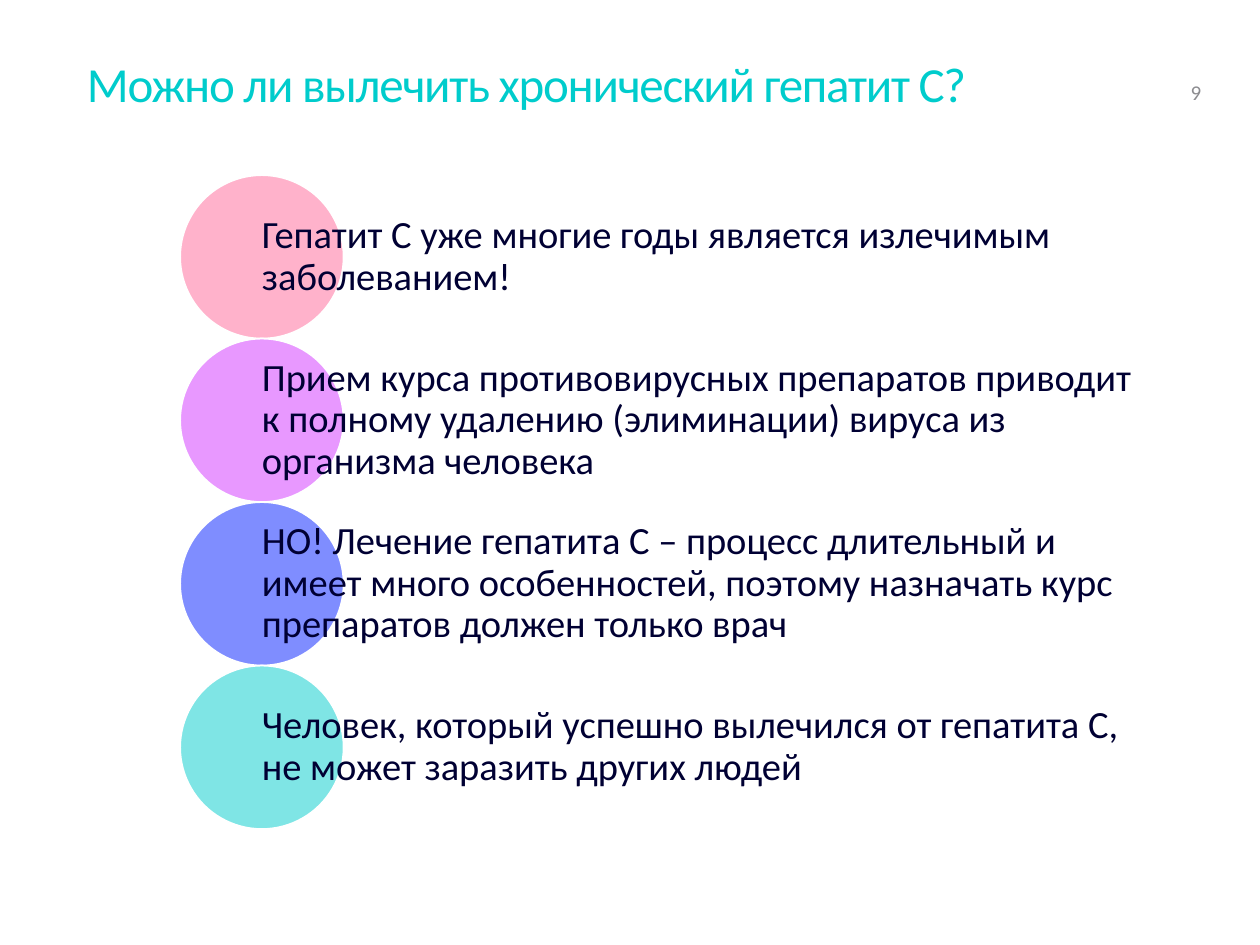
from lxml.etree import SubElement
from pptx import Presentation
from pptx.dml.color import RGBColor
from pptx.enum.shapes import MSO_SHAPE
from pptx.enum.text import MSO_ANCHOR
from pptx.oxml.ns import qn
from pptx.util import Inches, Pt

WIDE, HIGH = 10, 7.5
ITEMS = [
    ("FF6699", "Гепатит С уже многие годы является излечимым заболеванием!"),
    ("D233FF", "Прием курса противовирусных препаратов приводит к полному "
               "удалению (элиминации) вируса из организма человека"),
    ("001CFF", "НО! Лечение гепатита С – процесс длительный и имеет много "
               "особенностей, поэтому назначать курс препаратов должен "
               "только врач"),
    ("00CCCC", "Человек, который успешно вылечился от гепатита С, "
               "не может заразить других людей"),
]


def paint(color, value):
    """Set a colour from a hex string."""
    color.rgb = RGBColor.from_string(value)


def write(slide, box, text, size, color, anchor, pad, lead):
    """Place one paragraph in a box and return it."""
    frame = slide.shapes.add_textbox(*map(Inches, box)).text_frame
    frame.word_wrap = True
    frame.vertical_anchor = anchor
    frame.margin_left = frame.margin_right = 0
    frame.margin_top = frame.margin_bottom = Inches(pad)
    para = frame.paragraphs[0]
    para.text = text
    para.line_spacing = lead
    para.font.name = "Calibri"
    para.font.size = Pt(size)
    paint(para.font.color, color)
    return para


def draw_disc(slide, box, color):
    """Draw a half transparent disc with a white rim."""
    disc = slide.shapes.add_shape(MSO_SHAPE.OVAL, *map(Inches, box))
    disc.shadow.inherit = False
    disc.fill.solid()
    paint(disc.fill.fore_color, color)
    tint = disc.fill._xPr.find(qn("a:solidFill"))[0]
    SubElement(tint, qn("a:alpha"), val="50000")
    paint(disc.line.color, "FFFFFF")
    disc.line.width = Pt(1)


def draw_head(slide, box, title, page):
    """Place the title and, to its right, the page number."""
    left, top, width, height = box
    para = write(slide, box, title, 28, "00CCCC", MSO_ANCHOR.TOP, 0.05, Pt(32))
    para.runs[0].font._element.set("spc", "-70")
    spot = (left + width + 0.14, top, 0.38, 0.47)
    write(slide, spot, page, 12, "8C8C90", MSO_ANCHOR.BOTTOM, 0.04, 1.0)


def draw_list(slide, box, items):
    """Stack discs in equal rows, each text starting at its disc's centre."""
    left, top, width, height = box
    row = height / len(items)
    for i, (color, text) in enumerate(items):
        y = top + i * row
        draw_disc(slide, (left, y, row, row), color)
        spot = (left + row / 2, y, width - row / 2, row)
        write(slide, spot, text, 22, "000033", MSO_ANCHOR.MIDDLE, 0.03, 0.9)


def main():
    """Build the slide and save it."""
    deck = Presentation()
    deck.slide_width, deck.slide_height = Inches(WIDE), Inches(HIGH)
    slide = deck.slides.add_slide(deck.slide_layouts[6])
    draw_head(slide, (0.69, 0.4, 8.62, 1.03),
              "Можно ли вылечить хронический гепатит С?", "9")
    draw_list(slide, (1.43, 1.39, 7.58, 5.19), ITEMS)
    deck.save("out.pptx")


if __name__ == "__main__":
    main()
